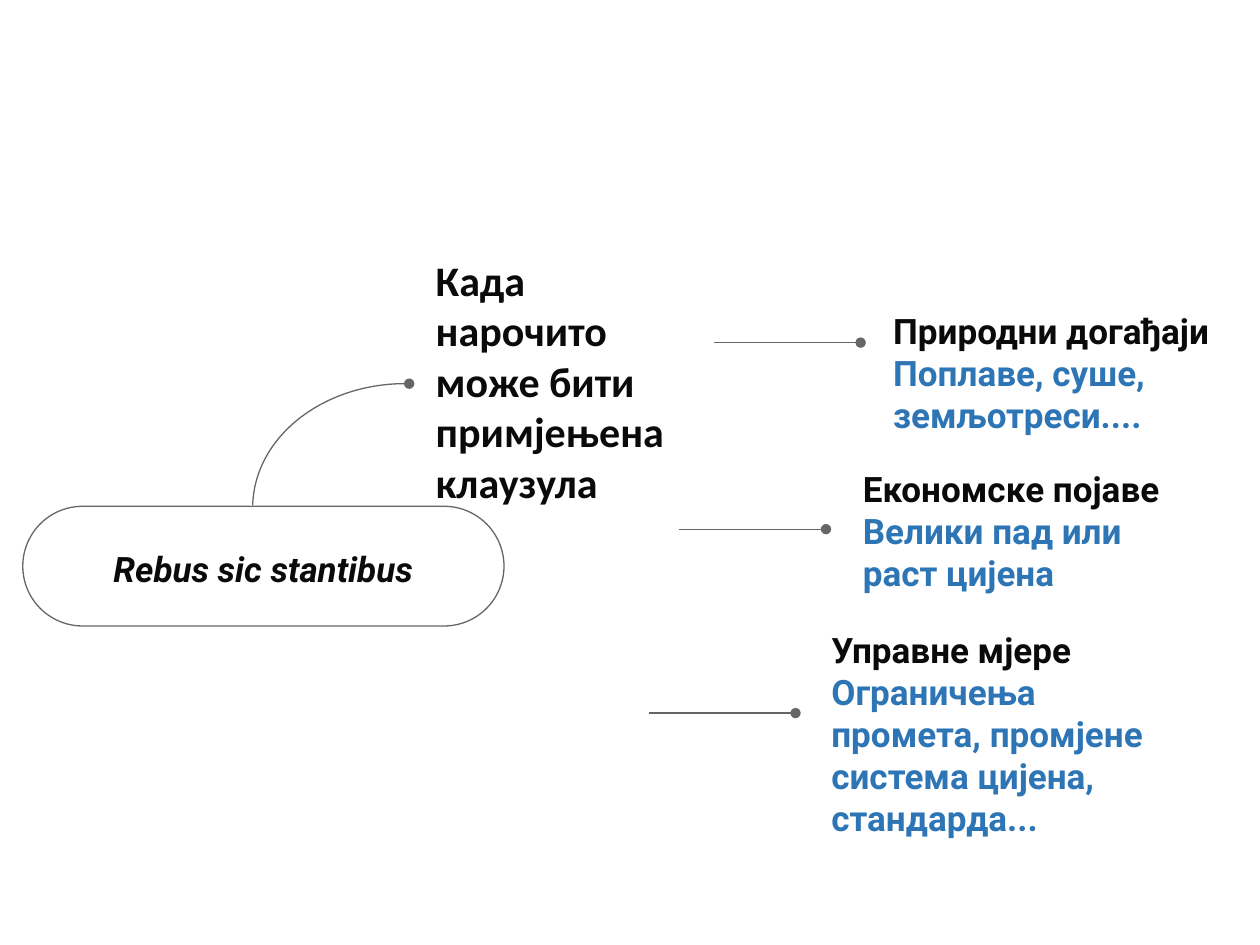
from pptx import Presentation
from pptx.util import Pt
from pptx.dml.color import RGBColor
from pptx.enum.shapes import MSO_CONNECTOR, MSO_SHAPE
from pptx.enum.text import MSO_ANCHOR, PP_ALIGN
from pptx.oxml.ns import qn
from lxml.etree import SubElement

COLORS = {"ink": "0A0A0A", "detail": "2E75B6", "line": "666666"}


def add_text(left, top, width, height, paragraphs, font="Roboto", size=20,
             align=PP_ALIGN.LEFT, italic=False):
    box = slide.shapes.add_textbox(Pt(left), Pt(top), Pt(width), Pt(height))
    frame = box.text_frame
    frame.word_wrap = True
    frame.vertical_anchor = MSO_ANCHOR.MIDDLE
    frame.margin_left = frame.margin_right = Pt(7.2)
    frame.margin_top = frame.margin_bottom = Pt(7.2)
    for index, (text, color) in enumerate(paragraphs):
        para = frame.add_paragraph() if index else frame.paragraphs[0]
        para.text = text
        para.alignment = align
        para.font.name = font
        para.font.size = Pt(size)
        para.font.bold = True
        para.font.italic = italic
        para.font.color.rgb = RGBColor.from_string(COLORS[color])


def style_line(item, oval_end=False):
    item.line.color.rgb = RGBColor.from_string(COLORS["line"])
    item.line.width = Pt(0.75)
    if oval_end:
        SubElement(item.line._get_or_add_ln(), qn("a:tailEnd"), type="oval")


deck = Presentation()
deck.slide_width = Pt(720)
deck.slide_height = Pt(540)
slide = deck.slides.add_slide(deck.slide_layouts[6])

pill = slide.shapes.add_shape(
    MSO_SHAPE.ROUNDED_RECTANGLE, Pt(13), Pt(289.3), Pt(275), Pt(68.4))
pill.adjustments[0] = 0.5
pill.fill.background()
pill.shadow.inherit = False
style_line(pill)

add_text(34.6, 295.2, 231.8, 59, [("Rebus sic stantibus", "ink")],
         align=PP_ALIGN.CENTER, italic=True)
add_text(241.9, 148.3, 164.2, 138.2,
         [("Када нарочито може бити примјењена клаузула", "ink")],
         font="Calibri", size=24)

arc = slide.shapes.add_shape(
    MSO_SHAPE.ARC, Pt(160.6), Pt(203), Pt(141.8), Pt(174.2))
arc.rotation = 270
arc.adjustments[0] = 162.52
arc.adjustments[1] = 1.136
arc.fill.background()
arc.shadow.inherit = False
style_line(arc, oval_end=True)

causes = [
    (503.3, 177.1, 212.4, 72, 408, 195.8,
     "Природни догађаји", "Поплаве, суше, земљотреси...."),
    (486, 288, 200.2, 30.2, 388.2, 302.4,
     "Економске појаве", "Велики пад или раст цијена"),
    (468, 401, 201.6, 36, 370.8, 407.5,
     "Управне мјере",
     "Ограничења промета, промјене система цијена, стандарда..."),
]
for left, top, width, height, line_left, line_top, heading, detail in causes:
    add_text(left, top, width, height, [(heading, "ink"), (detail, "detail")])
    pointer = slide.shapes.add_connector(
        MSO_CONNECTOR.STRAIGHT, Pt(line_left), Pt(line_top),
        Pt(line_left + 83.8), Pt(line_top))
    style_line(pointer, oval_end=True)
    SubElement(pointer._element.spPr, qn("a:effectLst"))

deck.save("out.pptx")
